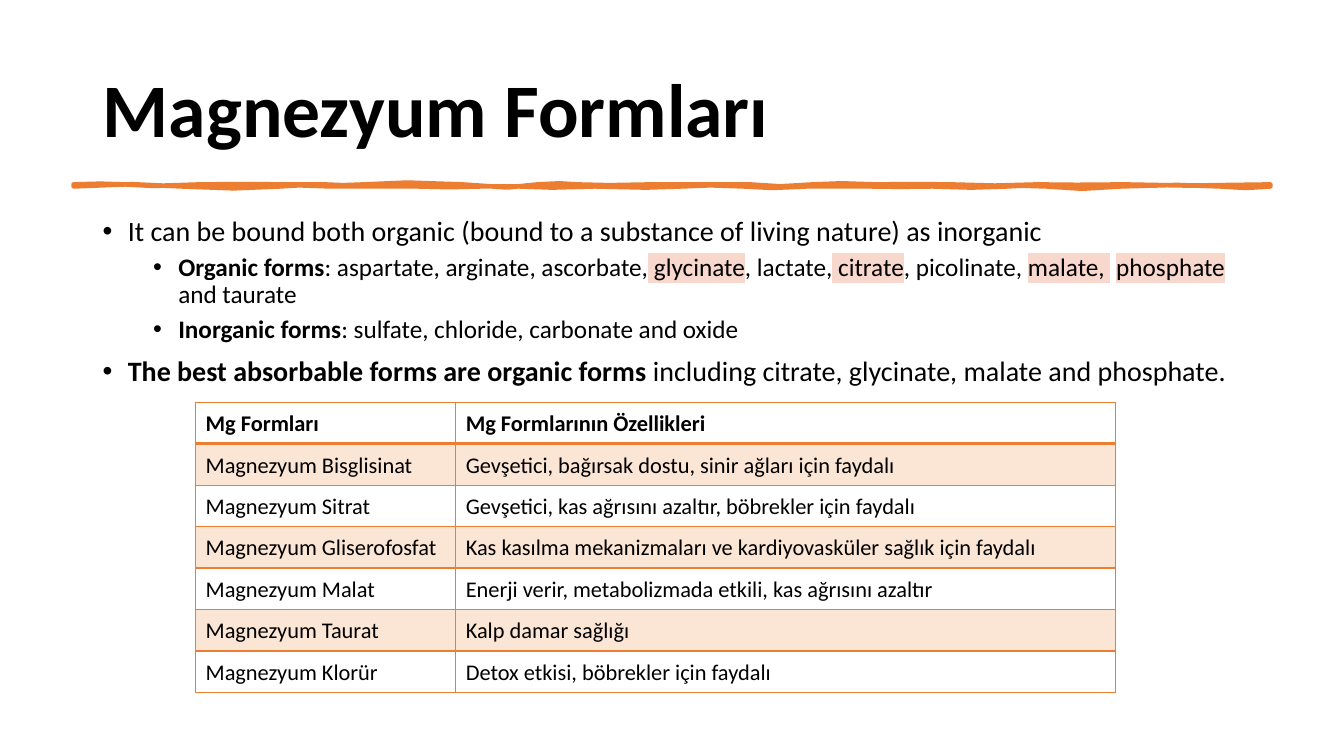
from lxml.etree import SubElement
from pptx import Presentation
from pptx.dml.color import RGBColor
from pptx.enum.text import MSO_ANCHOR, PP_ALIGN
from pptx.oxml.ns import qn
from pptx.util import Inches, Pt

FONT = "Calibri"
COLORS = {"text": "000000", "accent": "ED7D31", "mark": "F8D7CD", "plain": "FFFFFF"}

TITLE = "Magnezyum Formları"

# Each bullet: level, then runs of (text, style); style is bold or a highlight colour
BULLETS = [
    (0, [("It can be bound both organic (bound to a substance of living nature) as inorganic", "")]),
    (1, [("Organic forms", "bold"), (": aspartate, arginate, ascorbate,", ""),
         (" glycinate", "mark"), (", lactate,", ""), (" citrate", "mark"),
         (", picolinate, ", ""), ("malate, ", "mark"), (" ", ""),
         ("phosphate ", "mark"), ("and taurate", "plain")]),
    (1, [("Inorganic forms", "bold"), (": sulfate, chloride, carbonate and oxide", "")]),
    (0, [("The best absorbable forms are organic forms ", "bold"),
         ("including citrate, glycinate, malate and phosphate.", "")]),
]
# Per level: indent in inches, text size, space before
LEVELS = [(0.25, 20, 10), (0.75, 18, 5)]

TABLE = [
    ("Mg Formları", "Mg Formlarının Özellikleri"),
    ("Magnezyum Bisglisinat", "Gevşetici, bağırsak dostu, sinir ağları için faydalı"),
    ("Magnezyum Sitrat", "Gevşetici, kas ağrısını azaltır, böbrekler için faydalı"),
    ("Magnezyum Gliserofosfat", "Kas kasılma mekanizmaları ve kardiyovasküler sağlık için faydalı"),
    ("Magnezyum Malat", "Enerji verir, metabolizmada etkili, kas ağrısını azaltır"),
    ("Magnezyum Taurat", "Kalp damar sağlığı"),
    ("Magnezyum Klorür", "Detox etkisi, böbrekler için faydalı"),
]
COLUMN_WIDTHS = (2.58, 6.54)
TABLE_HEIGHT = 2.88

# Hand-drawn rule: cubic curves as (control, control, end), clockwise from the start
RULE_START = (0.73, 1.83)
RULE_CURVES = [
    ((0.89, 1.81), (1.11, 1.83), (1.24, 1.83)), ((1.36, 1.84), (1.62, 1.86), (1.98, 1.83)),
    ((2.34, 1.81), (2.51, 1.84), (2.84, 1.83)), ((3.17, 1.83), (3.07, 1.83), (3.22, 1.83)),
    ((3.38, 1.84), (3.42, 1.84), (3.61, 1.83)), ((3.8, 1.82), (4.24, 1.79), (4.59, 1.83)),
    ((4.94, 1.88), (5.17, 1.86), (5.33, 1.83)), ((5.49, 1.81), (5.63, 1.82), (5.72, 1.83)),
    ((5.81, 1.85), (6.25, 1.83), (6.46, 1.83)), ((6.67, 1.84), (7.23, 1.82), (7.44, 1.83)),
    ((7.65, 1.85), (7.82, 1.86), (8.06, 1.83)), ((8.3, 1.81), (8.38, 1.82), (8.68, 1.83)),
    ((8.99, 1.85), (9.14, 1.8), (9.43, 1.83)), ((9.72, 1.87), (10.02, 1.82), (10.29, 1.83)),
    ((10.55, 1.85), (10.78, 1.82), (11.15, 1.83)), ((11.51, 1.85), (11.99, 1.84), (12.6, 1.83)),
    ((12.6, 1.84), (12.6, 1.84), (12.6, 1.85)), ((12.42, 1.87), (12.3, 1.87), (12.1, 1.85)),
    ((11.9, 1.84), (11.49, 1.82), (11.12, 1.85)), ((10.75, 1.89), (10.7, 1.87), (10.38, 1.85)),
    ((10.05, 1.84), (10.18, 1.84), (9.99, 1.85)), ((9.8, 1.87), (9.48, 1.86), (9.25, 1.85)),
    ((9.02, 1.85), (8.84, 1.86), (8.63, 1.85)), ((8.41, 1.85), (8.28, 1.85), (8.0, 1.85)),
    ((7.73, 1.86), (7.57, 1.88), (7.38, 1.85)), ((7.19, 1.83), (6.88, 1.84), (6.76, 1.85)),
    ((6.63, 1.87), (6.24, 1.86), (5.9, 1.85)), ((5.55, 1.85), (5.37, 1.88), (5.15, 1.85)),
    ((4.94, 1.83), (4.91, 1.87), (4.77, 1.85)), ((4.63, 1.84), (4.3, 1.88), (4.14, 1.85)),
    ((3.99, 1.83), (3.71, 1.87), (3.28, 1.85)), ((2.86, 1.83), (3.03, 1.84), (2.78, 1.85)),
    ((2.53, 1.87), (2.13, 1.88), (1.8, 1.85)), ((1.47, 1.82), (1.18, 1.82), (0.73, 1.85)),
]
CURVE_STEPS = 2


def color(name):
    return RGBColor.from_string(COLORS[name])


def set_font(paragraph, size, bold=None):
    font = paragraph.font
    font.name, font.size, font.bold = FONT, Pt(size), bold
    font.color.rgb = color("text")


def place(shape, left, top, width, height):
    shape.left, shape.top = Inches(left), Inches(top)
    shape.width, shape.height = Inches(width), Inches(height)


def curve_points(start, curves):
    for first, second, end in curves:
        for step in range(1, CURVE_STEPS + 1):
            t = step / CURVE_STEPS
            u = 1 - t
            yield tuple(Inches(u**3 * a + 3 * u * u * t * b + 3 * u * t * t * c + t**3 * d)
                        for a, b, c, d in zip(start, first, second, end))
        start = end


def add_border(cell, side, width):
    line = SubElement(cell._tc.get_or_add_tcPr(), qn(f"a:{side}"), w=str(Pt(width)))
    fill = SubElement(line, qn("a:solidFill"))
    SubElement(fill, qn("a:srgbClr"), val=COLORS["accent"])


def fill_band(cell):
    cell.fill.solid()
    cell.fill.fore_color.rgb = color("accent")
    tint = cell._tc.tcPr.find(qn("a:solidFill"))[0]
    SubElement(tint, qn("a:alpha"), val="20000")


def add_title(page):
    title = page.shapes.title
    place(title, 0.92, 0.4, 11.5, 1.45)
    title.text_frame.text = TITLE
    title.text_frame.vertical_anchor = MSO_ANCHOR.MIDDLE
    para = title.text_frame.paragraphs[0]
    para.alignment, para.line_spacing = PP_ALIGN.LEFT, 0.9
    set_font(para, 54, True)


def add_rule(page):
    builder = page.shapes.build_freeform(*(Inches(value) for value in RULE_START))
    builder.add_line_segments(list(curve_points(RULE_START, RULE_CURVES)), close=True)
    rule = builder.convert_to_shape()
    rule.shadow.inherit = False
    rule.fill.solid()
    rule.fill.fore_color.rgb = color("accent")
    rule.line.color.rgb = color("accent")
    rule.line.width = Pt(3.25)


def add_bullets(page):
    box = page.shapes.add_textbox(Inches(0.92), Inches(2.11), Inches(11.5), Inches(4.65))
    frame = box.text_frame
    frame.word_wrap = True
    for index, (level, runs) in enumerate(BULLETS):
        para = frame.add_paragraph() if index else frame.paragraphs[0]
        indent, size, space = LEVELS[level]
        para.level, para.line_spacing, para.space_before = level, 0.9, Pt(space)
        properties = para._p.get_or_add_pPr()
        properties.set("marL", str(Inches(indent)))
        properties.set("indent", str(Inches(-0.25)))
        SubElement(properties, qn("a:buFont"), typeface="Arial")
        SubElement(properties, qn("a:buChar"), char="•")
        set_font(para, size)
        for text, style in runs:
            span = para.add_run()
            span.text = text
            span.font.bold = style == "bold"
            if style in COLORS:
                highlight = SubElement(span._r.get_or_add_rPr(), qn("a:highlight"))
                SubElement(highlight, qn("a:srgbClr"), val=COLORS[style])


def add_forms_table(page):
    table = page.shapes.add_table(
        len(TABLE), len(COLUMN_WIDTHS), Inches(1.94), Inches(3.99),
        Inches(sum(COLUMN_WIDTHS)), Inches(TABLE_HEIGHT)).table
    table.first_row = table.horz_banding = False
    for column, width in zip(table.columns, COLUMN_WIDTHS):
        column.width = Inches(width)
    for row, texts in enumerate(TABLE):
        table.rows[row].height = Inches(TABLE_HEIGHT / len(TABLE))
        for column, text in enumerate(texts):
            cell = table.cell(row, column)
            cell.text = text
            cell.vertical_anchor = MSO_ANCHOR.MIDDLE
            para = cell.text_frame.paragraphs[0]
            para.line_spacing = 1.07
            set_font(para, 16, row == 0)
            # The line under the header is heavier
            for side in ("lnL", "lnR", "lnT", "lnB"):
                add_border(cell, side, 2 if row == 0 and side == "lnB" else 1)
            if row % 2:
                fill_band(cell)
            else:
                cell.fill.background()


def main():
    deck = Presentation()
    deck.slide_width, deck.slide_height = Inches(13.33), Inches(7.5)
    page = deck.slides.add_slide(deck.slide_layouts[5])
    add_title(page)
    add_rule(page)
    add_bullets(page)
    add_forms_table(page)
    deck.save("out.pptx")


if __name__ == "__main__":
    main()
